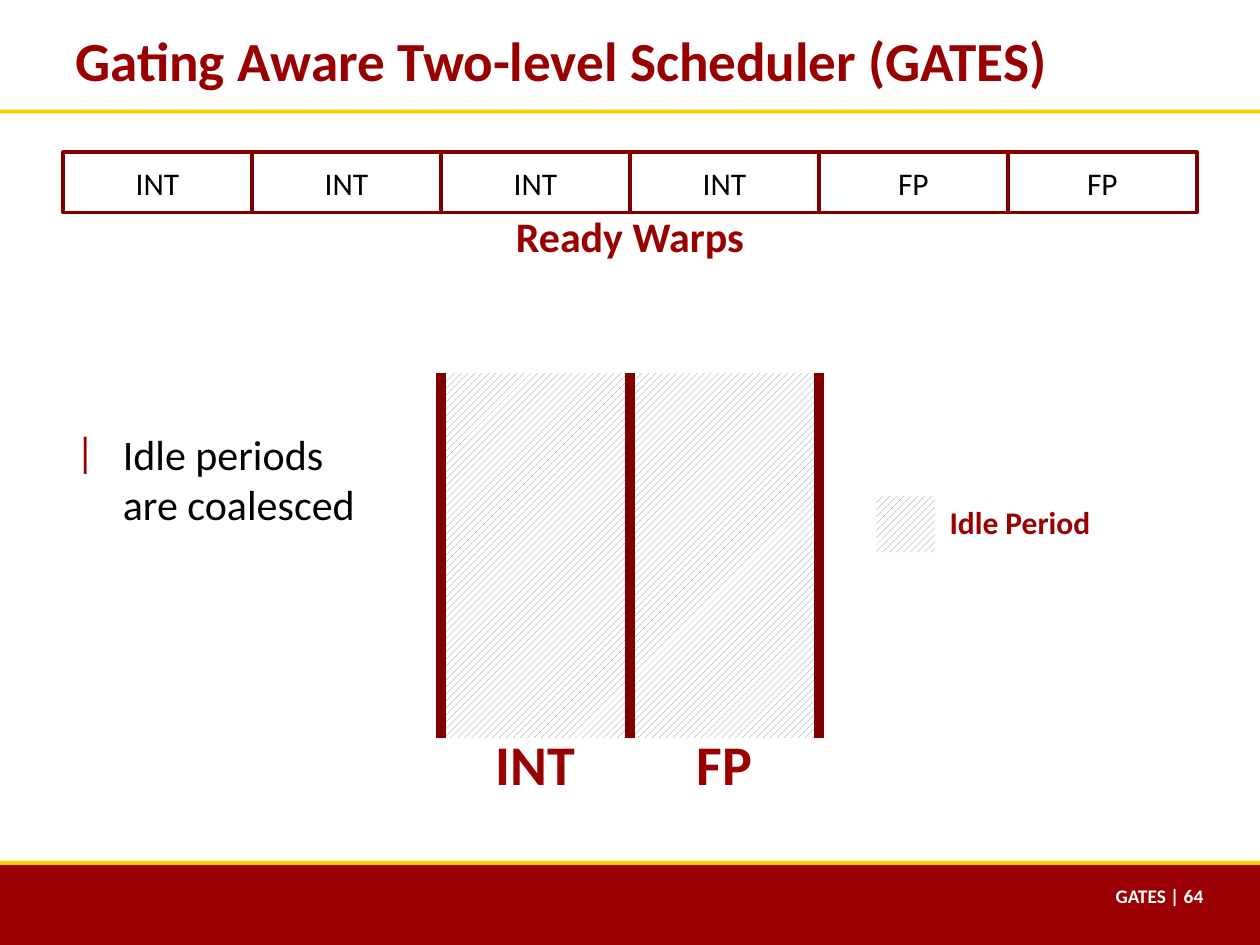
"""Build the slide on the gating aware two-level scheduler."""
from lxml.etree import SubElement as Sub
from pptx import Presentation as Deck
from pptx.dml.color import RGBColor as RGB
from pptx.enum.dml import MSO_PATTERN as Hatch
from pptx.enum.shapes import MSO_CONNECTOR as Conn, MSO_SHAPE as Form
from pptx.enum.text import MSO_ANCHOR as Anchor, MSO_AUTO_SIZE as Auto, PP_ALIGN as Align
from pptx.oxml.ns import qn
from pptx.util import Pt

HUES = {"band": "9A0004", "gold": "FFCC00", "red": "990000", "dark": "800000",
        "grey": "808080", "white": "FFFFFF", "black": "000000"}


def hue(name):
    """Return the named colour."""
    return RGB.from_string(HUES[name])


class Page:
    """Hold the style and the current slide."""
    font = "Calibri"

    def __init__(self, deck):
        """Add a title and content slide."""
        self.slide = deck.slides.add_slide(deck.slide_layouts[1])
        self.items = self.slide.shapes

    def style(self, shape, text, size, tint, bold=False, align=Align.CENTER,
              anchor=Anchor.MIDDLE, wrap=True):
        """Set and format the text of a shape."""
        frame = shape.text_frame
        frame.text = text
        para = frame.paragraphs[0]
        looks = [
            (frame, {"auto_size": Auto.NONE, "word_wrap": wrap, "vertical_anchor": anchor}),
            (para, {"alignment": align, "space_before": Pt(0)}),
        ]
        for run in para.runs:
            run.font.color.rgb = hue(tint)
            looks.append((run.font, {"name": self.font, "size": Pt(size), "bold": bold}))
        for part, values in looks:
            for key, value in values.items():
                setattr(part, key, value)
        return para

    def hold(self, shape, box):
        """Move a placeholder to a box."""
        for key, value in zip(("left", "top", "width", "height"), box):
            setattr(shape, key, Pt(value))
        return shape

    def title(self, box, text):
        """Fill the title placeholder."""
        self.style(self.hold(self.items.title, box), text, 31.5, "red", True, Align.LEFT)

    def points(self, box, text):
        """Fill the body placeholder with one bar bullet."""
        body = self.hold(self.slide.placeholders[1], box)
        para = self.style(body, text, 24, "black", align=Align.LEFT, anchor=Anchor.TOP)
        props = para._p.get_or_add_pPr()
        props.set("marL", str(Pt(27)))
        props.set("indent", str(Pt(-27)))
        Sub(Sub(props, qn("a:buClr")), qn("a:srgbClr"), val=HUES["red"])
        Sub(props, qn("a:buFont"), typeface=self.font)
        Sub(props, qn("a:buChar"), char="|")

    def rect(self, box, fill, line=None):
        """Add a plain rectangle."""
        shape = self.items.add_shape(Form.RECTANGLE, *map(Pt, box))
        shape.shadow.inherit = False
        shape.fill.solid()
        shape.fill.fore_color.rgb = hue(fill)
        if line:
            shape.line.color.rgb = hue(line)
            shape.line.width = Pt(2)
        else:
            shape.line.fill.background()
        return shape

    def hatch(self, box):
        """Add a rectangle with diagonal hatching."""
        shape = self.rect(box, "white")
        shape.fill.patterned()
        shape.fill.pattern = Hatch.WIDE_UPWARD_DIAGONAL
        shape.fill.fore_color.rgb = hue("grey")
        shape.fill.back_color.rgb = hue("white")
        return shape

    def label(self, box, text, size, tint="red", **look):
        """Add a bold text box."""
        self.style(self.items.add_textbox(*map(Pt, box)), text, size, tint, True, **look)

    def wall(self, x, top, base):
        """Add a thick upright line."""
        line = self.items.add_connector(Conn.STRAIGHT, Pt(x), Pt(top), Pt(x), Pt(base))
        line.line.color.rgb = hue("dark")
        line.line.width = Pt(6)
        Sub(line._element.spPr, qn("a:effectLst"))
        return line


def main():
    """Draw the slide and save it."""
    deck = Deck()
    wide, high, unit = 720, 540, 108
    deck.slide_width, deck.slide_height = Pt(wide), Pt(high)
    page = Page(deck)

    page.rect((0, 492, wide, 48), "band")
    for top in (492, 62.7):
        page.rect((0, top, wide, 2.2), "gold")
    page.title((36, 5.8, 648, 56.9), "Gating Aware Two-level Scheduler (GATES)")

    for col, kind in enumerate(["INT"] * 4 + ["FP"] * 2):
        cell = page.rect((36 + col * unit, 87, unit, 34.5), "white", "dark")
        page.style(cell, kind, 18, "black")
    page.label((324, 105.1, 72, 59), "Ready Warps", 24, wrap=False)

    left, top, tall = 252, 213.2, 208.7
    idle = page.hatch((left, top, 2 * unit, tall))
    walls = [page.wall(left + col * unit, top, top + tall) for col in range(3)]
    walls[1].begin_connect(idle, 0)
    walls[1].end_connect(idle, 2)
    for col, kind in enumerate(("INT", "FP")):
        page.label((left + col * unit, 400.3, unit, 72), kind, 32, wrap=False)

    page.hatch((500.8, 283.6, 33.4, 32))
    page.label((529.2, 262.3, 107.3, 72), "Idle Period", 18, wrap=False)
    page.points((36, 241, 200, 70), "Idle periods\vare coalesced")
    page.label((566.6, 501.8, 128.2, 25.2), "GATES | 64", 11, "white",
               align=Align.RIGHT, anchor=Anchor.TOP)
    deck.save("out.pptx")


if __name__ == "__main__":
    main()
